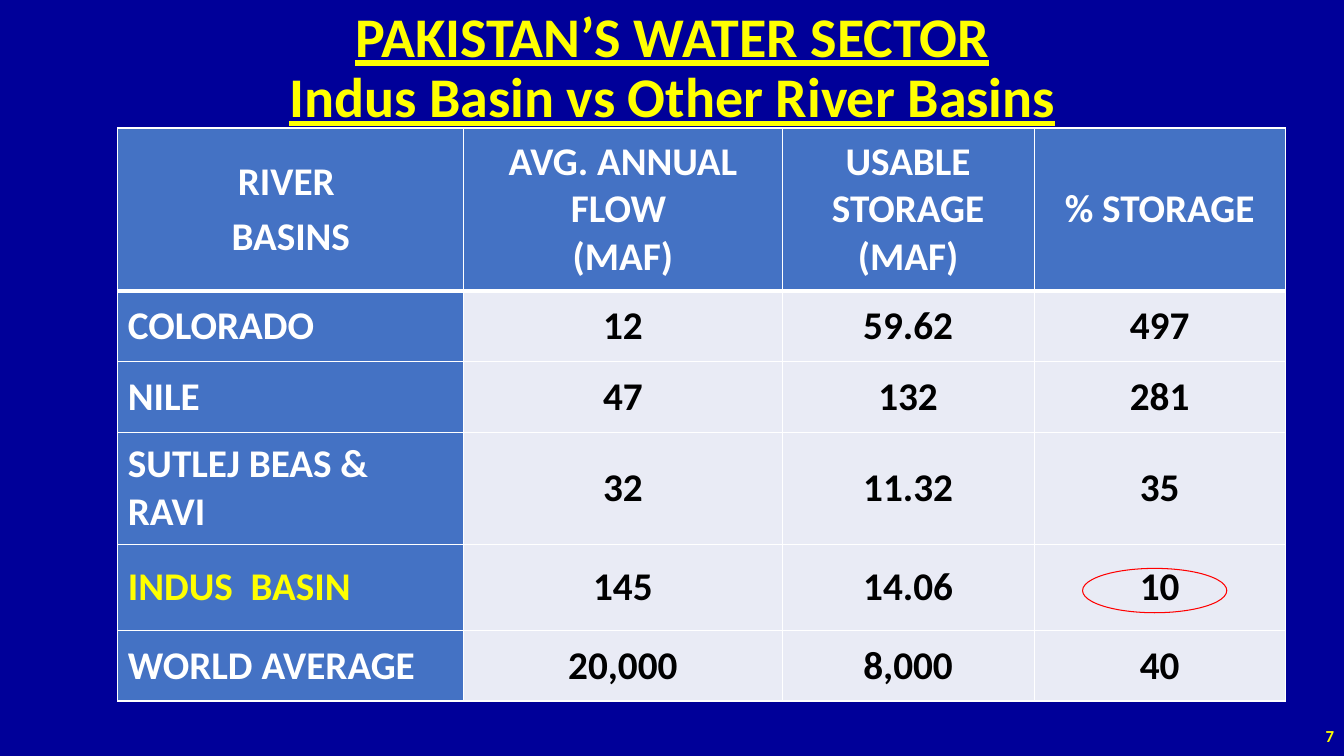
from dataclasses import dataclass
from typing import Any

from lxml import etree
from pptx import Presentation
from pptx.dml.color import RGBColor
from pptx.enum import shapes, text
from pptx.oxml import ns
from pptx.util import Pt

COLORS = {
    "navy": "000099",
    "yellow": "FFFF00",
    "white": "FFFFFF",
    "black": "000000",
    "blue": "4472C4",
    "pale": "E9EBF5",
    "red": "FF0000",
}
COLUMN_WIDTHS = (247, 227.5, 180, 179.3)
HEADERS = ("RIVER \nBASINS", "AVG. ANNUAL FLOW \v(MAF)", "USABLE STORAGE (MAF)", "% STORAGE")
HEADER_HEIGHT = 116.6
TABLE_SIZE = 28


@dataclass(frozen=True)
class Box:
    left: float
    top: float
    width: float
    height: float

    def lengths(self) -> tuple[Pt, ...]:
        return tuple(Pt(value) for value in (self.left, self.top, self.width, self.height))


@dataclass(frozen=True)
class Basin:
    name: str
    flow: str
    storage: str
    percent: str
    height: float = 50.4
    name_color: str = "white"


BASINS = (
    Basin("COLORADO", "12", "59.62", "497"),
    Basin("NILE", "47", "132", "281"),
    Basin("SUTLEJ BEAS & RAVI", "32", "11.32", "35", height=80.2),
    Basin("INDUS  BASIN", "145", "14.06", "10", height=61.4, name_color="yellow"),
    Basin("WORLD AVERAGE", "20,000", "8,000", "40"),
)
TITLE_BOX = Box(84.2, 3.6, 792, 92)
TABLE_BOX = Box(84.2, 91.4, sum(COLUMN_WIDTHS), HEADER_HEIGHT + sum(b.height for b in BASINS))
NUMBER_BOX = Box(744, 511.2, 216, 28.8)
MARKER_BOX = Box(773.3, 406, 103, 31.7)


def rgb(name: str) -> RGBColor:
    return RGBColor.from_string(COLORS[name])


def apply(target: Any, formats: dict[str, Any]) -> None:
    for name, value in formats.items():
        setattr(target, name, value)


def write(frame: Any, content: str, size: float, color: str, align: Any,
          underline: bool = False, **paragraph_formats: Any) -> None:
    """Fill a text frame with bold text; later paragraphs get a gap of 20% of the size."""
    frame.text = content
    frame.word_wrap = True
    font_formats = {"name": "Calibri", "size": Pt(size), "bold": True, "underline": underline}
    for index, paragraph in enumerate(frame.paragraphs):
        gap = Pt(0.2 * size if index else 0)
        apply(paragraph, {"alignment": align, "space_before": gap, **paragraph_formats})
        for run in paragraph.runs:
            apply(run.font, font_formats)
            run.font.color.rgb = rgb(color)


def add_borders(cell: Any, top: float, bottom: float) -> None:
    properties = cell._tc.get_or_add_tcPr()
    for side, width in (("L", 1), ("R", 1), ("T", top), ("B", bottom)):
        line = etree.SubElement(properties, ns.qn(f"a:ln{side}"), w=str(Pt(width)))
        fill = etree.SubElement(line, ns.qn("a:solidFill"))
        etree.SubElement(fill, ns.qn("a:srgbClr"), val=COLORS["white"])


def add_title(slide: Any) -> None:
    title = slide.shapes.title
    apply(title, dict(zip(("left", "top", "width", "height"), TITLE_BOX.lengths())))
    write(title.text_frame, "PAKISTAN’S WATER SECTOR\vIndus Basin vs Other River Basins",
          40, "yellow", text.PP_ALIGN.CENTER, underline=True, line_spacing=0.9)
    apply(title.text_frame, {"vertical_anchor": text.MSO_ANCHOR.MIDDLE,
                             "auto_size": text.MSO_AUTO_SIZE.NONE})


def add_basin_table(slide: Any) -> None:
    rows = [HEADERS] + [(b.name, b.flow, b.storage, b.percent) for b in BASINS]
    heights = [HEADER_HEIGHT] + [b.height for b in BASINS]
    name_colors = ["white"] + [b.name_color for b in BASINS]
    table = slide.shapes.add_table(len(rows), len(HEADERS), *TABLE_BOX.lengths()).table
    apply(table, {"first_row": False, "horz_banding": False})
    for column, width in zip(table.columns, COLUMN_WIDTHS):
        column.width = Pt(width)
    for row_index, (values, height) in enumerate(zip(rows, heights)):
        table.rows[row_index].height = Pt(height)
        is_header = row_index == 0
        margin = Pt(5 if is_header else 7.2)
        for column_index, value in enumerate(values):
            cell = table.cell(row_index, column_index)
            is_name = column_index == 0
            is_label = is_header or is_name
            apply(cell, {"vertical_anchor": text.MSO_ANCHOR.MIDDLE,
                         "margin_left": margin, "margin_right": margin,
                         "margin_top": Pt(3.6), "margin_bottom": Pt(3.6)})
            add_borders(cell, top=3 if row_index == 1 else 1, bottom=3 if is_header else 1)
            cell.fill.solid()
            cell.fill.fore_color.rgb = rgb("blue" if is_label else "pale")
            left_aligned = is_name and not is_header
            align = text.PP_ALIGN.LEFT if left_aligned else text.PP_ALIGN.CENTER
            color = name_colors[row_index] if is_label else "black"
            write(cell.text_frame, value, TABLE_SIZE, color, align)


def add_slide_number(slide: Any) -> None:
    frame = slide.shapes.add_textbox(*NUMBER_BOX.lengths()).text_frame
    write(frame, "7", 12, "yellow", text.PP_ALIGN.RIGHT)
    frame.vertical_anchor = text.MSO_ANCHOR.MIDDLE


def add_marker(slide: Any) -> None:
    """Ring the storage share of the Indus basin."""
    marker = slide.shapes.add_shape(shapes.MSO_SHAPE.OVAL, *MARKER_BOX.lengths())
    marker.shadow.inherit = False
    marker.fill.background()
    marker.line.color.rgb = rgb("red")
    marker.line.width = Pt(0.75)


def main() -> None:
    presentation = Presentation()
    apply(presentation, {"slide_width": Pt(960), "slide_height": Pt(540)})
    slide = presentation.slides.add_slide(presentation.slide_layouts.get_by_name("Title Only"))
    slide.background.fill.solid()
    slide.background.fill.fore_color.rgb = rgb("navy")
    add_title(slide)
    add_basin_table(slide)
    add_slide_number(slide)
    add_marker(slide)
    presentation.save("out.pptx")


if __name__ == "__main__":
    main()
